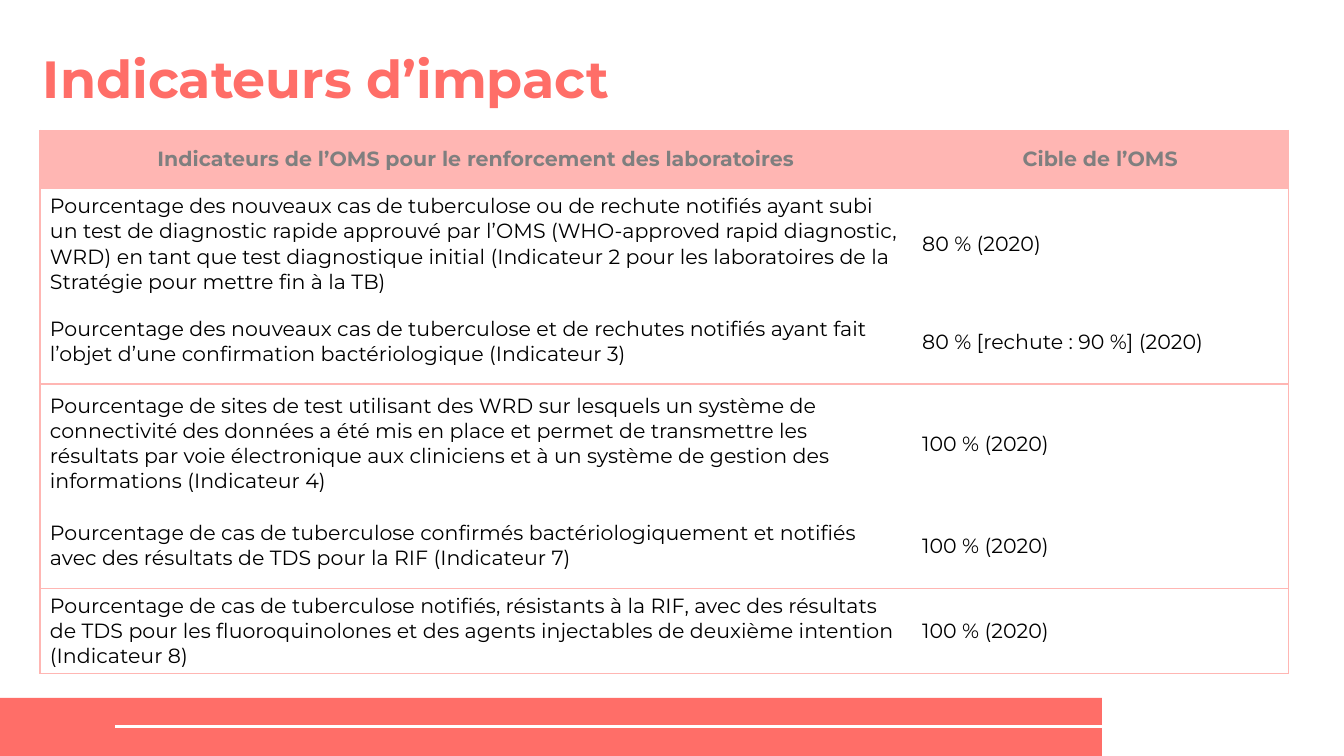
"""Build the slide of impact indicators for tuberculosis laboratories."""
from lxml import etree
from pptx import Presentation
from pptx import util as u
from pptx.dml.color import RGBColor
from pptx.enum import shapes, text
from pptx.oxml.ns import qn

THEME = {
    "font": "Montserrat", "coral": "FF6E68", "pink": "FFB6B3",
    "grey": "7F7F7F", "black": "000000", "white": "FFFFFF",
    "title": 28, "body": 11, "border": 0.75, "rule": 1.5,
}
COLUMNS, ROWS = 100, 56.25
HEADER = ("Indicateurs de l’OMS pour le renforcement des laboratoires", "Cible de l’OMS")
INDICATORS = [
    ("Pourcentage des nouveaux cas de tuberculose ou de rechute notifiés ayant subi un test "
     "de diagnostic rapide approuvé par l’OMS (WHO-approved rapid diagnostic, WRD) en tant que "
     "test diagnostique initial (Indicateur 2 pour les laboratoires de la Stratégie pour "
     "mettre fin à la TB)", "80 % (2020)"),
    ("Pourcentage des nouveaux cas de tuberculose et de rechutes notifiés ayant fait l’objet "
     "d’une confirmation bactériologique (Indicateur 3)", "80 % [rechute : 90 %] (2020)"),
    ("Pourcentage de sites de test utilisant des WRD sur lesquels un système de connectivité "
     "des données a été mis en place et permet de transmettre les résultats par voie "
     "électronique aux cliniciens et à un système de gestion des informations "
     "(Indicateur 4)", "100 % (2020)"),
    ("Pourcentage de cas de tuberculose confirmés bactériologiquement et notifiés avec des "
     "résultats de TDS pour la RIF (Indicateur 7)", "100 % (2020)"),
    ("Pourcentage de cas de tuberculose notifiés, résistants à la RIF, avec des résultats de "
     "TDS pour les fluoroquinolones et des agents injectables de deuxième intention "
     "(Indicateur 8)", "100 % (2020)"),
]
COLUMN_SPANS = (64.9, 28)
ROW_SPANS = (4.35, 8.2, 6.3, 8.9, 6.3, 6.3)
RULED_EDGES = {0, 1, 3, 5, 6}

presentation = Presentation()
presentation.slide_width = u.Inches(10)
unit = presentation.slide_width / COLUMNS
presentation.slide_height = u.Emu(round(ROWS * unit))
slide = presentation.slides.add_slide(presentation.slide_layouts[6])


def grid(*spans):
    """Turn grid columns and rows into lengths."""
    return [u.Emu(round(span * unit)) for span in spans]


def write(frame, words, size, color, bold, align):
    """Put one formatted paragraph in a text frame."""
    paragraph = frame.paragraphs[0]
    paragraph.alignment = align
    run = paragraph.add_run()
    run.text = words
    for name, value in {"name": THEME["font"], "size": u.Pt(size), "bold": bold}.items():
        setattr(run.font, name, value)
    run.font.color.rgb = RGBColor.from_string(color)


band = slide.shapes.add_shape(shapes.MSO_SHAPE.RECTANGLE, *grid(0, 51.93, 82, ROWS - 51.93))
band.shadow.inherit = False
band.fill.solid()
band.fill.fore_color.rgb = RGBColor.from_string(THEME["coral"])
band.line.fill.background()

rule = slide.shapes.add_connector(shapes.MSO_CONNECTOR.STRAIGHT, *grid(82.6, 54.05, 8.55, 54.05))
rule.line.color.rgb = RGBColor.from_string(THEME["white"])
rule.line.width = u.Pt(THEME["rule"])
etree.SubElement(rule.element.spPr, qn("a:effectLst"))

table = slide.shapes.add_table(
    len(ROW_SPANS), len(COLUMN_SPANS),
    *grid(2.97, 9.7, sum(COLUMN_SPANS), sum(ROW_SPANS))).table
table.first_row = table.horz_banding = False
for column, width in zip(table.columns, grid(*COLUMN_SPANS)):
    column.width = width
for row, height in zip(table.rows, grid(*ROW_SPANS)):
    row.height = height

side, edge = grid(0.75, 0.38)
cell_format = {
    "margin_left": side, "margin_right": side, "margin_top": edge, "margin_bottom": edge,
    "vertical_anchor": text.MSO_ANCHOR.MIDDLE,
}
for r, entries in enumerate([HEADER, *INDICATORS]):
    is_header = r == 0
    for c, words in enumerate(entries):
        cell = table.cell(r, c)
        for name, value in cell_format.items():
            setattr(cell, name, value)
        write(cell.text_frame, words, THEME["body"],
              THEME["grey" if is_header else "black"], is_header,
              text.PP_ALIGN.CENTER if is_header else text.PP_ALIGN.LEFT)
        borders = {"a:lnL": c == 0, "a:lnR": c == len(COLUMN_SPANS) - 1,
                   "a:lnT": r in RULED_EDGES, "a:lnB": r + 1 in RULED_EDGES}
        properties = cell._tc.get_or_add_tcPr()
        for tag, ruled in borders.items():
            line = etree.SubElement(properties, qn(tag), w=str(u.Pt(THEME["border"])))
            fill = etree.SubElement(line, qn("a:solidFill" if ruled else "a:noFill"))
            if ruled:
                etree.SubElement(fill, qn("a:srgbClr"), val=THEME["pink"])
        if is_header:
            cell.fill.solid()
            cell.fill.fore_color.rgb = RGBColor.from_string(THEME["pink"])
        else:
            cell.fill.background()

title = slide.shapes.add_textbox(*grid(3.2, 1.8, 88.7, 6.3)).text_frame
title_format = {
    "word_wrap": True, "vertical_anchor": text.MSO_ANCHOR.BOTTOM,
    "margin_left": 0, "margin_right": 0, "margin_top": 0, "margin_bottom": 0,
}
for name, value in title_format.items():
    setattr(title, name, value)
write(title, "Indicateurs d’impact", THEME["title"], THEME["coral"], True, text.PP_ALIGN.LEFT)

presentation.save("out.pptx")
